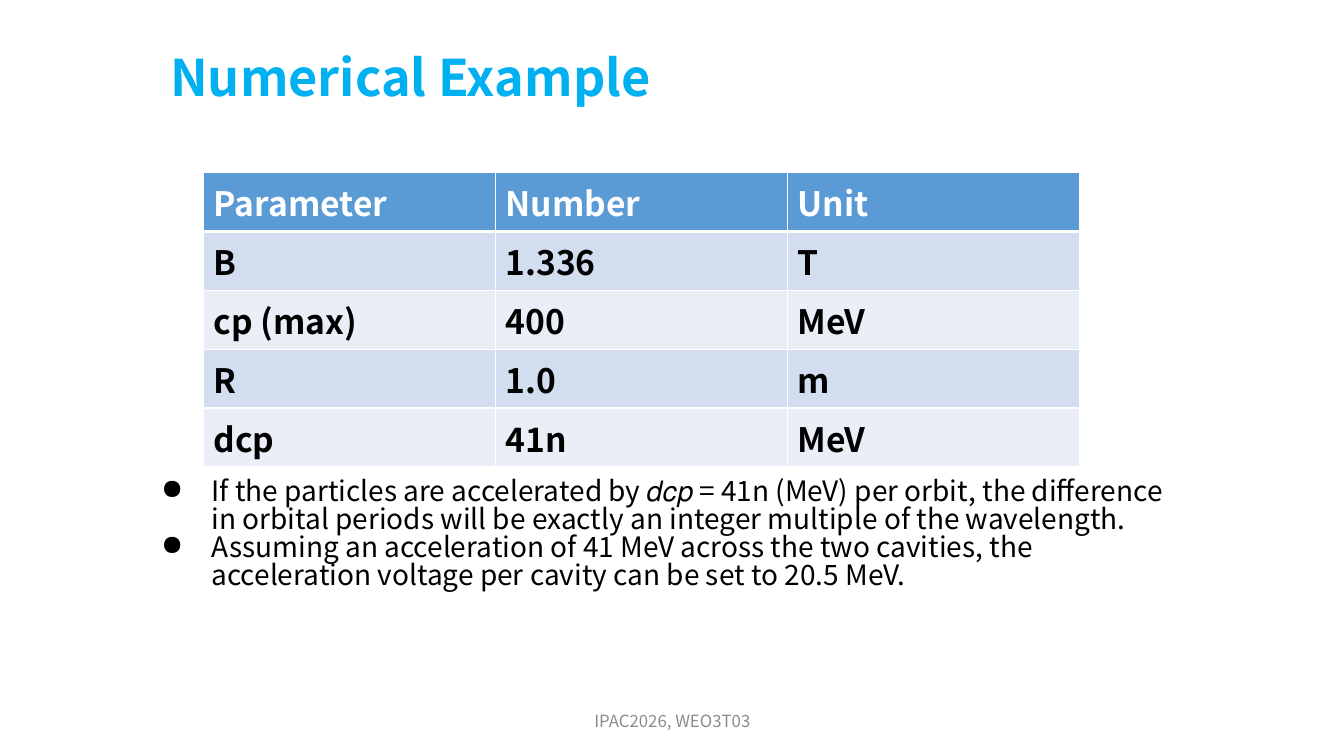
from lxml import etree
from pptx import Presentation
from pptx.dml.color import RGBColor
from pptx.enum.text import MSO_ANCHOR, PP_ALIGN
from pptx.oxml.ns import qn
from pptx.util import Cm, Pt

CENTER = PP_ALIGN.CENTER
MIDDLE = MSO_ANCHOR.MIDDLE
FONT = "Noto Sans CJK JP"
LINE_SPACING = 0.83

PARAMETERS = [
    ("Parameter", "Number", "Unit"),
    ("B", "1.336", "T"),
    ("cp (max)", "400", "MeV"),
    ("R", "1.0", "m"),
    ("dcp", "41n", "MeV"),
]
REMARKS = [
    "If the particles are accelerated by 𝑑𝑐𝑝 = 41n (MeV) per orbit, the difference "
    "in orbital periods will be exactly an integer multiple of the wavelength.",
    "Assuming an acceleration of 41 MeV across the two cavities, the "
    "acceleration voltage per cavity can be set to 20.5 MeV.",
]


def color(hex_string):
    return RGBColor.from_string(hex_string)


def add_run(paragraph, text, size, hex_string, bold=False):
    run = paragraph.add_run()
    run.text = text
    run.font.name = FONT
    run.font.size = Pt(size)
    run.font.bold = bold
    run.font.color.rgb = color(hex_string)


def add_text_frame(slide, left, top, width, height, wrap=True):
    text_frame = slide.shapes.add_textbox(Cm(left), Cm(top), Cm(width), Cm(height)).text_frame
    text_frame.word_wrap = wrap
    return text_frame


def add_bullet(paragraph, indent):
    """Give the paragraph a round bullet with a hanging indent."""
    properties = paragraph._p.get_or_add_pPr()
    properties.set("marL", str(Cm(indent)))
    properties.set("indent", str(-Cm(indent)))
    etree.SubElement(properties, qn("a:buChar")).set("char", "●")


def set_borders(cell, bottom_width):
    """Draw white borders, with the bottom one as wide as given."""
    properties = cell._tc.get_or_add_tcPr()
    widths = {"a:lnL": 1, "a:lnR": 1, "a:lnT": 1, "a:lnB": bottom_width}
    for position, (tag, width) in enumerate(widths.items()):
        line = etree.Element(qn(tag), w=str(Pt(width)))
        fill = etree.SubElement(line, qn("a:solidFill"))
        etree.SubElement(fill, qn("a:srgbClr"), val="FFFFFF")
        properties.insert(position, line)


def add_title(slide, left, top, width, height):
    paragraph = add_text_frame(slide, left, top, width, height, wrap=False).paragraphs[0]
    paragraph.line_spacing = LINE_SPACING
    add_run(paragraph, "Numerical Example", 36, "00B0F0", bold=True)


def add_parameter_table(slide, left, top, width, height):
    table = slide.shapes.add_table(
        len(PARAMETERS), len(PARAMETERS[0]), Cm(left), Cm(top), Cm(width), Cm(height)
    ).table
    for row_index, values in enumerate(PARAMETERS):
        is_header = row_index == 0
        band = "D2DEEF" if row_index % 2 else "EAEFF7"
        for column_index, value in enumerate(values):
            cell = table.cell(row_index, column_index)
            cell.fill.solid()
            cell.fill.fore_color.rgb = color("5B9BD5" if is_header else band)
            set_borders(cell, 3 if is_header else 1)
            text_color = "FFFFFF" if is_header else "000000"
            add_run(cell.text_frame.paragraphs[0], value, 24, text_color, bold=True)


def add_remarks(slide, left, top, width, height):
    text_frame = add_text_frame(slide, left, top, width, height)
    for index, remark in enumerate(REMARKS):
        paragraph = text_frame.add_paragraph() if index else text_frame.paragraphs[0]
        paragraph.line_spacing = LINE_SPACING
        add_bullet(paragraph, 1.27)
        add_run(paragraph, remark, 20, "000000")


def add_footer(slide, left, top, width, height):
    text_frame = add_text_frame(slide, left, top, width, height)
    text_frame.vertical_anchor = MIDDLE
    paragraph = text_frame.paragraphs[0]
    paragraph.alignment = CENTER
    add_run(paragraph, "IPAC2026, WEO3T03", 12, "8C8C8C")


def main():
    presentation = Presentation()
    presentation.slide_width = Cm(33.87)
    presentation.slide_height = Cm(19.05)
    slide = presentation.slides.add_slide(presentation.slide_layouts[6])
    add_parameter_table(slide, 5.13, 4.35, 22.07, 7.4)
    add_title(slide, 4.04, 1.3, 13.69, 1.8)
    add_remarks(slide, 3.81, 11.96, 26.26, 4.52)
    add_footer(slide, 11.23, 17.65, 11.43, 1.02)
    presentation.save("out.pptx")


if __name__ == "__main__":
    main()
